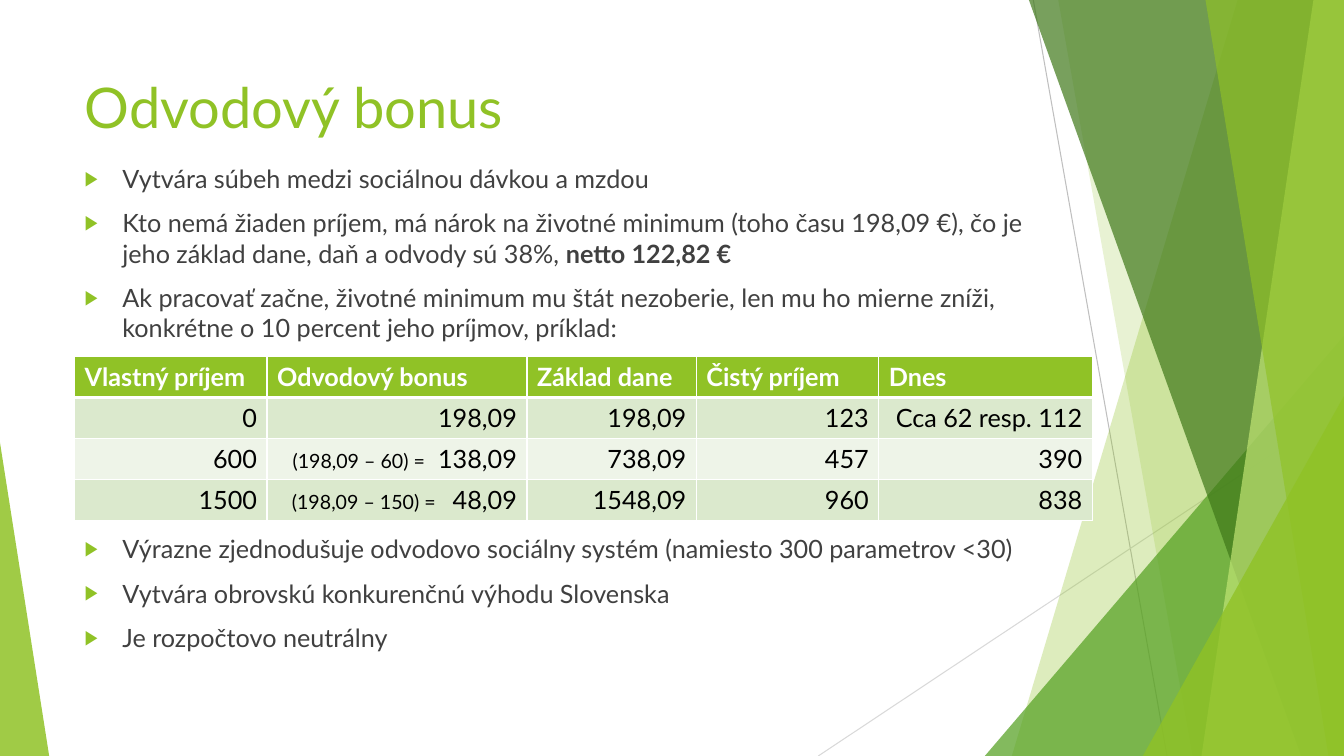
from dataclasses import dataclass

from lxml.etree import SubElement
from pptx import Presentation
from pptx.dml.color import RGBColor
from pptx.enum.shapes import MSO_CONNECTOR as Connector, MSO_SHAPE as Preset
from pptx.enum.text import MSO_ANCHOR as Anchor, MSO_AUTO_SIZE as AutoSize, PP_ALIGN as Align
from pptx.oxml.ns import qn
from pptx.util import Cm, Pt

WIDTH, HEIGHT = 33.87, 19.05
FONT = "Lato"
GREEN, WHITE, BLACK, GREY = "90C226", "FFFFFF", "000000", "404040"
ROW_FILLS = ("DBE9CD", "EEF4E8")
LINE_HEIGHT = 21.6
PARAGRAPH_GAP = 10


@dataclass(frozen=True)
class Ray:
    start: tuple[float, float]
    end: tuple[float, float]
    colour: str


@dataclass(frozen=True)
class Band:
    """Full-height area from a slanted left edge to the right side of the slide."""
    top_x: float
    bottom_x: float
    colour: str
    opacity: int


@dataclass(frozen=True)
class Corner:
    """Triangle standing on the bottom of the slide; apex is 0 (left) or 1 (right)."""
    left: float
    top: float
    width: float
    apex: int
    colour: str
    opacity: int


@dataclass(frozen=True)
class Bullet:
    text: str
    bold_end: str = ""
    space_before: float = PARAGRAPH_GAP


@dataclass(frozen=True)
class Sum:
    """A small calculation, a gap in points and its result."""
    calculation: str
    gap: float
    result: str


RAYS = (
    Ray((26.04, 0), (29.41, HEIGHT), "BFBFBF"),
    Ray((WIDTH, 10.24), (20.62, HEIGHT), "D9D9D9"),
)
FACETS = (
    Band(31.19, 25.5, GREEN, 30),
    Band(26.67, 30.05, GREEN, 20),
    Corner(24.82, 8.46, 9.05, 1, "54A021", 72),
    Band(25.93, 32.79, "3F7819", 70),
    Band(33.1, 30.28, "C0E474", 70),
    Band(30.38, 33.48, GREEN, 65),
    Corner(28.8, 9.98, 5.07, 1, GREEN, 80),
    Corner(0, 11.15, 1.24, 0, GREEN, 85),
)
# The fourth bullet leaves room for the table: four lines with their gaps.
TABLE_ROOM = 4 * (LINE_HEIGHT + PARAGRAPH_GAP) + PARAGRAPH_GAP
BULLETS = (
    Bullet("Vytvára súbeh medzi sociálnou dávkou a mzdou"),
    Bullet("Kto nemá žiaden príjem, má nárok na životné minimum (toho času 198,09 €), "
           "čo je jeho základ dane, daň a odvody sú 38%, ", "netto 122,82 €"),
    Bullet("Ak pracovať začne, životné minimum mu štát nezoberie, len mu ho mierne zníži, "
           "konkrétne o 10 percent jeho príjmov, príklad:"),
    Bullet("Výrazne zjednodušuje odvodovo sociálny systém (namiesto 300 parametrov <30)",
           space_before=TABLE_ROOM),
    Bullet("Vytvára obrovskú konkurenčnú výhodu Slovenska"),
    Bullet("Je rozpočtovo neutrálny"),
)
COLUMN_WIDTHS = (4.85, 6.55, 4.27, 4.6, 5.38)
ROW_HEIGHT = 1.03
ROWS = (
    ("Vlastný príjem", "Odvodový bonus", "Základ dane", "Čistý príjem", "Dnes"),
    ("0", "198,09", "198,09", "123", "Cca 62 resp. 112"),
    ("600", Sum("(198,09 – 60) =", 5.6, "138,09"), "738,09", "457", "390"),
    ("1500", Sum("(198,09 – 150) =", 8.4, "48,09"), "1548,09", "960", "838"),
)


def rgb(colour: str) -> RGBColor:
    return RGBColor.from_string(colour)


def set_font(paragraph, size: float, colour: str, bold: bool = False) -> None:
    font = paragraph.font
    font.name, font.size, font.bold = FONT, Pt(size), bold
    font.color.rgb = rgb(colour)


def place(shape, left: float, top: float, width: float, height: float) -> None:
    shape.left, shape.top = Cm(left), Cm(top)
    shape.width, shape.height = Cm(width), Cm(height)


def draw_ray(slide, ray: Ray) -> None:
    points = [Cm(value) for value in ray.start + ray.end]
    line = slide.shapes.add_connector(Connector.STRAIGHT, *points)
    line.line.color.rgb = rgb(ray.colour)
    line.line.width = Pt(0.75)
    SubElement(line.element.spPr, qn("a:effectLst"))


def draw_facet(slide, facet: Band | Corner) -> None:
    if isinstance(facet, Band):
        builder = slide.shapes.build_freeform(Cm(facet.top_x), 0)
        corners = ((WIDTH, 0), (WIDTH, HEIGHT), (facet.bottom_x, HEIGHT))
        builder.add_line_segments([(Cm(x), Cm(y)) for x, y in corners])
        shape = builder.convert_to_shape()
    else:
        shape = slide.shapes.add_shape(
            Preset.ISOSCELES_TRIANGLE, Cm(facet.left), Cm(facet.top),
            Cm(facet.width), Cm(HEIGHT - facet.top))
        shape.adjustments[0] = facet.apex
    shape.shadow.inherit = False
    shape.line.fill.background()
    shape.fill.solid()
    shape.fill.fore_color.rgb = rgb(facet.colour)
    colour = shape.element.spPr.find(".//" + qn("a:srgbClr"))
    SubElement(colour, qn("a:alpha"), val=str(facet.opacity * 1000))


def fill_title(title) -> None:
    place(title, 1.88, 1.7, 23.88, 2.29)
    frame = title.text_frame
    frame.text = "Odvodový bonus"
    frame.vertical_anchor = Anchor.TOP
    frame.auto_size = AutoSize.NONE
    frame.paragraphs[0].alignment = Align.LEFT
    set_font(frame.paragraphs[0], 40, GREEN)


def add_marker(paragraph) -> None:
    """Give the paragraph a hanging green triangle as its bullet."""
    properties = paragraph._p.get_or_add_pPr()
    properties.set("marL", str(Cm(0.95)))
    properties.set("indent", str(Cm(-0.95)))
    SubElement(SubElement(properties, qn("a:buClr")), qn("a:srgbClr"), val=GREEN)
    SubElement(properties, qn("a:buSzPct"), val="80000")
    SubElement(properties, qn("a:buChar"), char="▶")


def fill_body(body) -> None:
    place(body, 1.88, 3.99, 24.51, 13.36)
    frame = body.text_frame
    frame.auto_size = AutoSize.NONE
    for index, bullet in enumerate(BULLETS):
        paragraph = frame.add_paragraph() if index else frame.paragraphs[0]
        paragraph.space_before = Pt(bullet.space_before)
        add_marker(paragraph)
        set_font(paragraph, 18, GREY)
        paragraph.add_run().text = bullet.text
        if bullet.bold_end:
            run = paragraph.add_run()
            run.text, run.font.bold = bullet.bold_end, True


def set_borders(cell, top: float, bottom: float) -> None:
    properties = cell._tc.get_or_add_tcPr()
    for side, width in (("L", 1), ("R", 1), ("T", top), ("B", bottom)):
        line = SubElement(properties, qn(f"a:ln{side}"), w=str(Pt(width)))
        SubElement(SubElement(line, qn("a:solidFill")), qn("a:srgbClr"), val=WHITE)


def fill_cell(cell, content: str | Sum, row: int) -> None:
    header = row == 0
    set_borders(cell, top=3 if row == 1 else 1, bottom=3 if header else 1)
    cell.fill.solid()
    cell.fill.fore_color.rgb = rgb(GREEN if header else ROW_FILLS[(row - 1) % 2])
    paragraph = cell.text_frame.paragraphs[0]
    paragraph.alignment = Align.LEFT if header else Align.RIGHT
    set_font(paragraph, 18, WHITE if header else BLACK, bold=header)
    if isinstance(content, str):
        paragraph.add_run().text = content
        return
    calculation, gap, result = (paragraph.add_run() for _ in range(3))
    calculation.text, gap.text, result.text = content.calculation, " ", content.result
    calculation.font.size = gap.font.size = Pt(14)
    gap.font._element.set("spc", str(round(content.gap * 100)))


def draw_table(slide) -> None:
    table = slide.shapes.add_table(
        len(ROWS), len(COLUMN_WIDTHS), Cm(1.88), Cm(8.99),
        Cm(sum(COLUMN_WIDTHS)), Cm(ROW_HEIGHT * len(ROWS))).table
    for column, width in zip(table.columns, COLUMN_WIDTHS):
        column.width = Cm(width)
    for row, contents in enumerate(ROWS):
        for column, content in enumerate(contents):
            fill_cell(table.cell(row, column), content, row)


def main() -> None:
    presentation = Presentation()
    presentation.slide_width, presentation.slide_height = Cm(WIDTH), Cm(HEIGHT)
    slide = presentation.slides.add_slide(presentation.slide_layouts[1])
    for ray in RAYS:
        draw_ray(slide, ray)
    for facet in FACETS:
        draw_facet(slide, facet)
    title, body = slide.placeholders
    fill_title(title)
    fill_body(body)
    for placeholder in (title, body):
        placeholder.element.getparent().append(placeholder.element)
    draw_table(slide)
    presentation.save("out.pptx")


if __name__ == "__main__":
    main()
